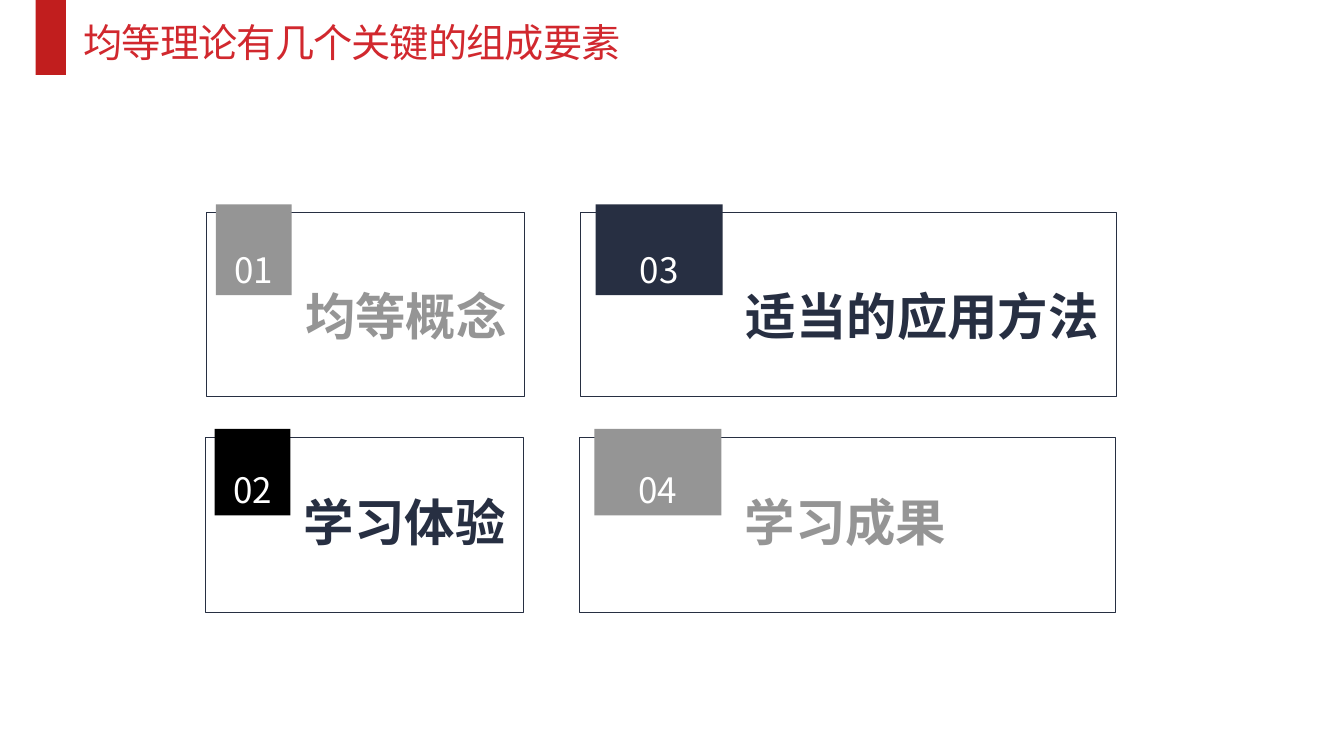
"""Build a slide with the four key elements of a theory as numbered cards."""
from lxml.etree import SubElement
from pptx import Presentation
from pptx.dml.color import RGBColor as Rgb
from pptx.enum.shapes import MSO_SHAPE as Kind
from pptx.enum.text import MSO_ANCHOR as Anchor, MSO_AUTO_SIZE as Auto, PP_ALIGN as Align
from pptx.oxml.ns import qn
from pptx.util import Cm, Pt

FONT = "Noto Sans CJK SC"
COLORS = {"bar": "C11E1E", "title": "D1282E", "navy": "272F42",
          "gray": "959595", "black": "000000", "white": "FFFFFF"}
TITLE = "均等理论有几个关键的组成要素"
CARDS = [
    ("01", "均等概念", "gray", "gray", 0, 0),
    ("03", "适当的应用方法", "navy", "navy", 0, 1),
    ("02", "学习体验", "black", "navy", 1, 0),
    ("04", "学习成果", "gray", "gray", 1, 1),
]
ROWS = [
    {"top": 5.36, "high": 4.62, "tag": 2.29, "drop": 1.83, "shift": 0},
    {"top": 11.02, "high": 4.42, "tag": 2.18, "drop": 1.35, "shift": -0.03},
]
COLS = [
    {"left": 5.21, "wide": 8, "inset": 0.23, "tag": 1.91, "label": 2.48, "text": 5.51},
    {"left": 14.63, "wide": 13.51, "inset": 0.38, "tag": 3.2, "label": 4.17, "text": 9.3},
]
RISE = 0.21


def color(name):
    return Rgb.from_string(COLORS[name])


def write(frame, text, size, tint, align=Align.LEFT, bold=False):
    para = frame.paragraphs[0]
    para.text = text
    para.alignment = align
    font = para.font
    font.size = Pt(size)
    font.bold = bold
    font.color.rgb = color(tint)
    font.name = FONT
    props = para._p.pPr.find(qn("a:defRPr"))
    SubElement(props, qn("a:ea")).set("typeface", FONT)
    return props


def add_rect(shapes, box, fill=None, line=None):
    rect = shapes.add_shape(Kind.RECTANGLE, *map(Cm, box))
    rect.shadow.inherit = False
    if fill:
        rect.fill.solid()
        rect.fill.fore_color.rgb = color(fill)
    else:
        rect.fill.background()
    if line:
        rect.line.color.rgb = color(line)
        rect.line.width = Pt(0.5)
    else:
        rect.line.fill.background()
    return rect


def add_title(slide):
    title = slide.shapes.title
    title.left, title.top, title.width, title.height = map(Cm, (1.85, 0.33, 14.17, 1.45))
    frame = title.text_frame
    frame.auto_size = Auto.NONE
    frame.vertical_anchor = Anchor.MIDDLE
    frame.margin_right = 0
    write(frame, TITLE, 28, "title").set("spc", "-60")


def add_card(slide, number, name, fill, tint, row, col):
    row, col = ROWS[row], COLS[col]
    left, top = col["left"] + row["shift"], row["top"]
    shapes = slide.shapes.add_group_shape().shapes
    add_rect(shapes, (left, top, col["wide"], row["high"]), line="navy")

    tag = add_rect(shapes, (left + col["inset"], top - RISE, col["tag"], row["tag"]), fill)
    tag.text_frame.vertical_anchor = Anchor.BOTTOM
    write(tag.text_frame, number, 25, "white", Align.CENTER)

    box = (left + col["label"], top + row["drop"], col["text"], row["tag"])
    frame = shapes.add_textbox(*map(Cm, box)).text_frame
    frame.word_wrap = True
    frame.margin_left = frame.margin_top = frame.margin_right = frame.margin_bottom = 0
    write(frame, name, 36, tint, bold=True)


def main():
    deck = Presentation()
    deck.slide_width, deck.slide_height = Cm(33.87), Cm(19.05)
    slide = deck.slides.add_slide(deck.slide_layouts[5])
    add_title(slide)
    add_rect(slide.shapes, (0.9, 0, 0.76, 1.89), "bar")
    for card in CARDS:
        add_card(slide, *card)
    deck.save("out.pptx")


if __name__ == "__main__":
    main()
